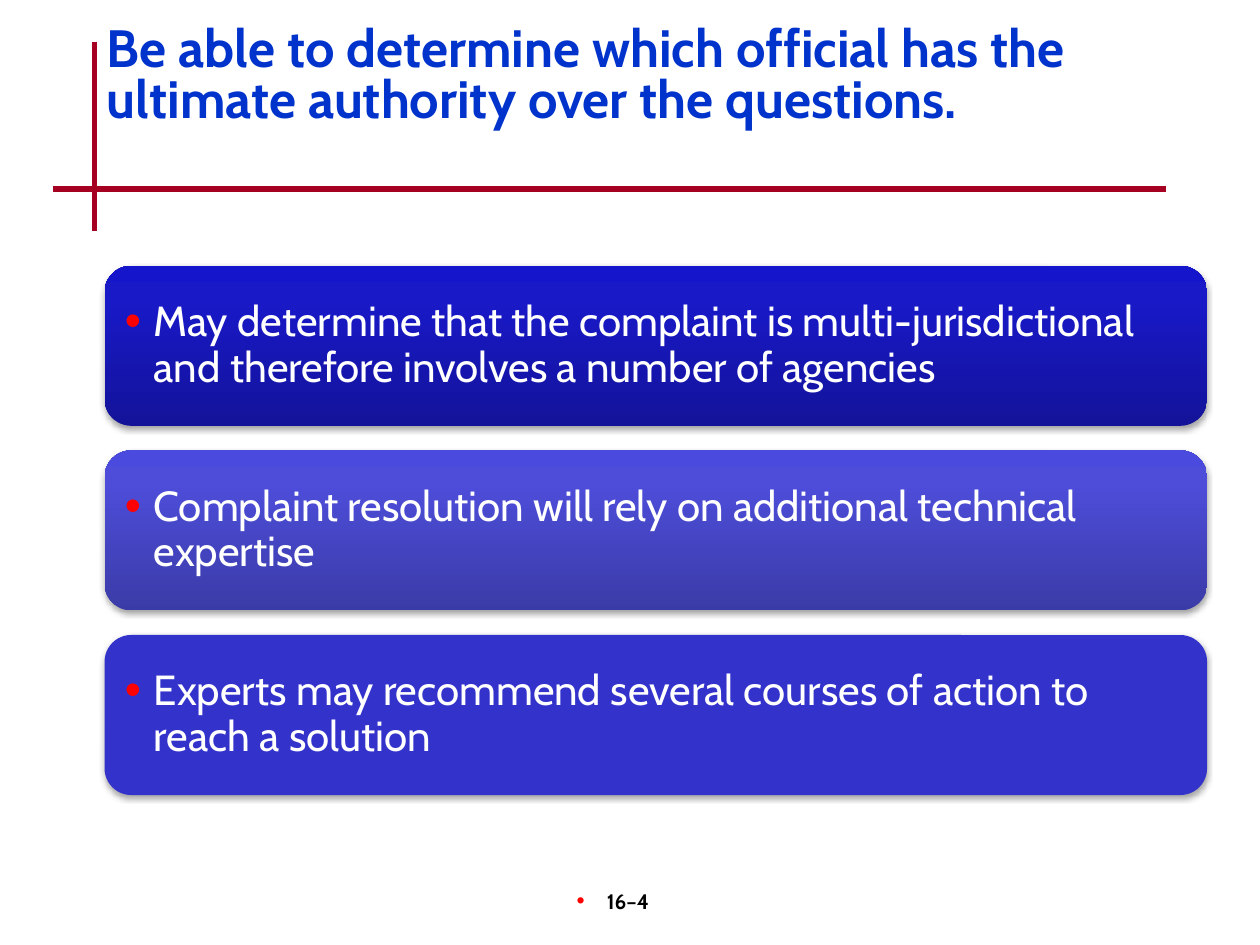
from lxml import etree
from pptx import Presentation, util as u
from pptx.dml.color import RGBColor
from pptx.enum import shapes, text
from pptx.oxml.ns import qn

NAVY, ROYAL, BLUE = (RGBColor.from_string(c) for c in ("13139A", "1919C8", "1515CC"))
DUSK, IRIS, VIOLET = (RGBColor.from_string(c) for c in ("3B3BA8", "4D4DDA", "4A4ADE"))
INDIGO = RGBColor(0x33, 0x33, 0xCC)
TITLE_BLUE = RGBColor(0x00, 0x33, 0xCC)
CRIMSON = RGBColor(0xA5, 0x00, 0x21)
RED = RGBColor(0xFF, 0x00, 0x00)
WHITE = RGBColor(0xFF, 0xFF, 0xFF)
BLACK = RGBColor(0x00, 0x00, 0x00)
FONT = "Cabin"

FIRST_TOP, LAST_TOP = 2.11, 5.04
CARD_LEFT, CARD_WIDTH, CARD_HEIGHT = 0.83, 8.75, 1.27
STOPS = (0, 80, 100)
CARDS = [
    ("May determine that the complaint is multi-jurisdictional and therefore "
     "involves a number of agencies", (NAVY, ROYAL, BLUE)),
    ("Complaint resolution will rely on additional technical expertise",
     (DUSK, IRIS, VIOLET)),
    ("Experts may recommend several courses of action to reach a solution",
     (INDIGO,)),
]


def add_node(parent, tag, **attributes):
    node = etree.SubElement(parent, qn(tag))
    for key, value in attributes.items():
        node.set(key, str(value))
    return node


def add_bullet(paragraph, hanging):
    props = paragraph._p.get_or_add_pPr()
    props.set("marL", str(u.Inches(hanging)))
    props.set("indent", str(-u.Inches(hanging)))
    add_node(add_node(props, "a:buClr"), "a:srgbClr", val=RED)
    add_node(props, "a:buSzPct", val=110000)
    add_node(props, "a:buFont", typeface="Arial")
    add_node(props, "a:buChar", char="•")


def write(paragraph, wording, size, colour, bold=False):
    run = paragraph.add_run()
    run.text = wording
    run.font.name, run.font.size, run.font.bold = FONT, u.Pt(size), bold
    run.font.color.rgb = colour


def add_box(slide, left, top, width, height):
    frame = slide.shapes.add_textbox(*map(u.Inches, (left, top, width, height))).text_frame
    frame.word_wrap = True
    return frame


def add_rule(slide, *ends):
    rule = slide.shapes.add_connector(shapes.MSO_CONNECTOR.STRAIGHT, *map(u.Inches, ends))
    rule.line.color.rgb = CRIMSON
    rule.line.width = u.Pt(3)
    add_node(rule._element.spPr, "a:effectLst")


def paint(card, colours):
    if len(colours) == 1:
        card.fill.solid()
        card.fill.fore_color.rgb = colours[0]
        return
    card.fill.gradient()
    card.fill.gradient_angle = 90
    stop_list = next(card._element.spPr.iter(qn("a:gsLst")))
    for stop in list(stop_list):
        stop_list.remove(stop)
    for position, colour in zip(STOPS, colours):
        stop = add_node(stop_list, "a:gs", pos=position * 1000)
        add_node(stop, "a:srgbClr", val=colour)


def cast_shadow(card):
    card.shadow.inherit = False
    effects = card._element.spPr.find(qn("a:effectLst"))
    shadow = add_node(effects, "a:outerShdw", blurRad=u.Pt(3.1), dist=u.Pt(1.8),
                      dir=5400000, rotWithShape=0)
    add_node(add_node(shadow, "a:srgbClr", val=BLACK), "a:alpha", val=35000)


def add_card(slide, top, wording, colours):
    card = slide.shapes.add_shape(
        shapes.MSO_SHAPE.ROUNDED_RECTANGLE,
        *map(u.Inches, (CARD_LEFT, top, CARD_WIDTH, CARD_HEIGHT)))
    paint(card, colours)
    card.line.fill.background()
    cast_shadow(card)
    frame = card.text_frame
    frame.word_wrap = True
    frame.vertical_anchor = text.MSO_ANCHOR.MIDDLE
    frame.margin_left = frame.margin_right = u.Inches(0.1)
    frame.margin_top = frame.margin_bottom = u.Inches(0.1)
    point = frame.paragraphs[0]
    add_bullet(point, 0.23)
    point.alignment = text.PP_ALIGN.LEFT
    point.line_spacing = 0.9
    write(point, wording, 24, WHITE)


def add_title(slide):
    title = add_box(slide, 0.75, 0.17, 8.5, 1).paragraphs[0]
    title.line_spacing = 0.8
    write(title, "Be able to determine which official has the ultimate "
          "authority over the questions.", 30, TITLE_BLUE, bold=True)


def add_page_number(slide):
    frame = add_box(slide, 3.92, 7, 2.08, 0.5)
    frame.margin_right = u.Inches(0.29)
    number = frame.paragraphs[0]
    add_bullet(number, 0.24)
    number.alignment = text.PP_ALIGN.CENTER
    write(number, "16–4", 12, BLACK, bold=True)


def main():
    deck = Presentation()
    deck.slide_width, deck.slide_height = u.Inches(10), u.Inches(7.5)
    slide = deck.slides.add_slide(deck.slide_layouts[6])
    add_rule(slide, 0.75, 0.33, 0.75, 1.83)
    add_rule(slide, 0.42, 1.5, 9.25, 1.5)
    add_page_number(slide)
    add_title(slide)
    pitch = (LAST_TOP - FIRST_TOP) / (len(CARDS) - 1)
    for row, (wording, colours) in enumerate(CARDS):
        add_card(slide, FIRST_TOP + row * pitch, wording, colours)
    deck.save("out.pptx")


if __name__ == "__main__":
    main()
